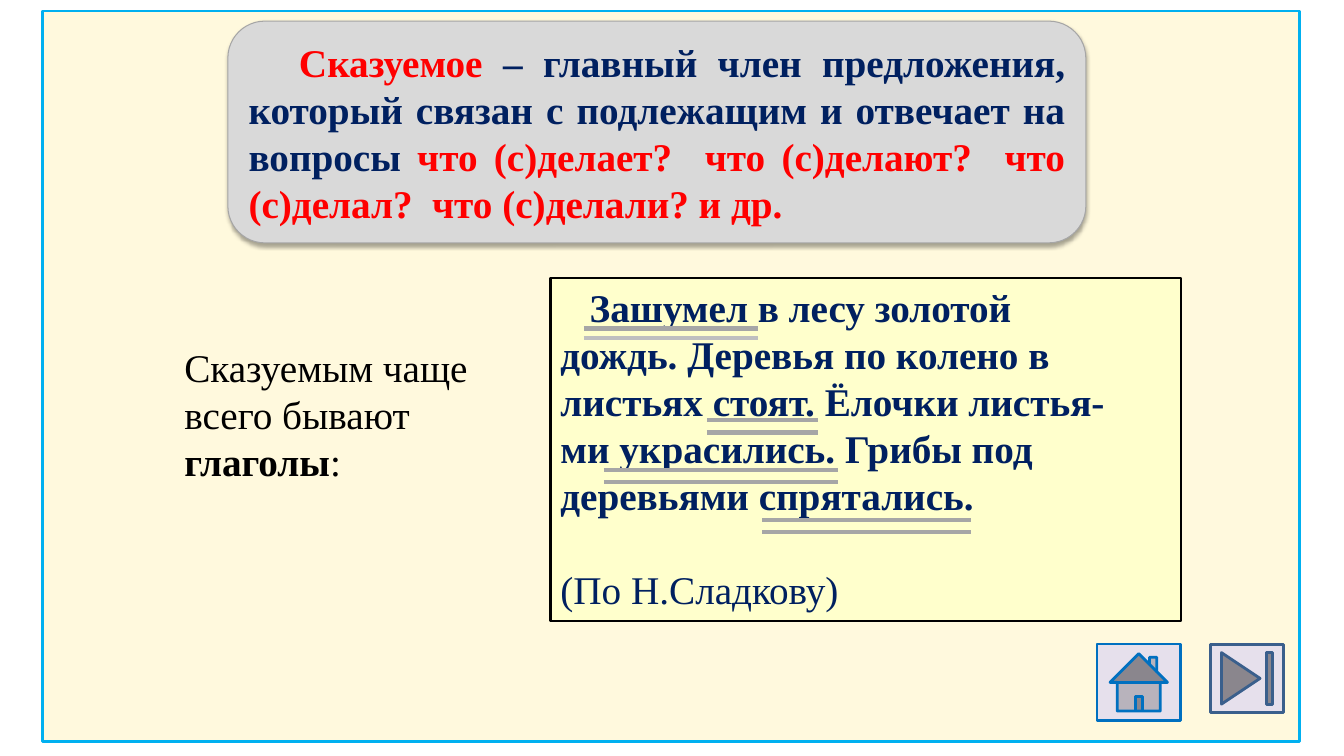
from lxml.etree import SubElement
from pptx import Presentation
from pptx.dml.color import RGBColor
from pptx.enum.shapes import MSO_CONNECTOR, MSO_SHAPE
from pptx.enum.text import MSO_ANCHOR, MSO_AUTO_SIZE, PP_ALIGN
from pptx.oxml.ns import qn
from pptx.util import Inches, Pt

NAVY, RED, BLACK, GRAY = "002060", "FF0000", "000000", "A6A6A6"
LILAC = "E6E0EC"


def color(value):
    return RGBColor.from_string(value)


def add_box(slide, kind, box, fill, line, width):
    sp = slide.shapes.add_shape(kind, *map(Inches, box))
    sp.shadow.inherit = False
    sp.fill.solid()
    sp.fill.fore_color.rgb = color(fill)
    sp.line.color.rgb = color(line)
    sp.line.width = Pt(width)
    return sp


def add_soft_shadow(sp):
    effects = sp._element.spPr.find(qn("a:effectLst"))
    shadow = SubElement(effects, qn("a:outerShdw"), blurRad=str(Pt(3.1)),
                        dist=str(Pt(1.8)), dir="5400000", rotWithShape="0")
    clr = SubElement(shadow, qn("a:srgbClr"), val=BLACK)
    SubElement(clr, qn("a:alpha"), val="35000")


def write(tf, paragraphs, align, indents):
    for i, (runs, indent) in enumerate(zip(paragraphs, indents)):
        p = tf.paragraphs[0] if i == 0 else tf.add_paragraph()
        p.alignment = align
        p._p.get_or_add_pPr().set("indent", str(Inches(indent)))
        for text, fill, bold in runs:
            r = p.add_run()
            r.text = text
            r.font.name = "Times New Roman"
            r.font.size = Pt(28)
            r.font.bold = bold
            r.font.color.rgb = color(fill)


def add_definition(slide, box):
    sp = add_box(slide, MSO_SHAPE.ROUNDED_RECTANGLE, box, "D9D9D9", GRAY, 0.75)
    add_soft_shadow(sp)
    tf = sp.text_frame
    tf.word_wrap = True
    tf.vertical_anchor = MSO_ANCHOR.MIDDLE
    runs = [
        ("Сказуемое ", RED, True),
        ("– главный член предложения, который связан с подлежащим "
         "и отвечает на вопросы ", NAVY, True),
        ("что (с)делает?  что (с)делают?  что (с)делал?  "
         "что (с)делали? и др.", RED, True),
    ]
    write(tf, [runs], PP_ALIGN.JUSTIFY, [0.5])


def add_remark(slide, box):
    tf = slide.shapes.add_textbox(*map(Inches, box)).text_frame
    tf.word_wrap = False
    tf.auto_size = MSO_AUTO_SIZE.SHAPE_TO_FIT_TEXT
    paragraphs = [
        [("Сказуемым чаще", BLACK, False)],
        [("всего бывают", BLACK, False)],
        [("глаголы", BLACK, True), (":", BLACK, False)],
    ]
    write(tf, paragraphs, PP_ALIGN.JUSTIFY, [0.5] * 3)


def add_double_underline(slide, left, top, width, gap, lower):
    group = slide.shapes.add_group_shape()
    for y, stroke in ((top, GRAY), (top + gap, lower)):
        line = group.shapes.add_connector(
            MSO_CONNECTOR.STRAIGHT, Inches(left), Inches(y),
            Inches(left + width), Inches(y))
        line.line.color.rgb = color(stroke)
        line.line.width = Pt(3)
        SubElement(line._element.spPr, qn("a:effectLst"))


def add_example(slide, box):
    left, top = box[:2]
    sp = add_box(slide, MSO_SHAPE.RECTANGLE, box, "FFFFCC", BLACK, 1.5)
    tf = sp.text_frame
    tf.word_wrap = True
    tf.auto_size = MSO_AUTO_SIZE.SHAPE_TO_FIT_TEXT
    tf.vertical_anchor = MSO_ANCHOR.TOP
    lines = [
        "Зашумел в лесу золотой",
        "дождь. Деревья по колено в",
        "листьях стоят. Ёлочки листья-",
        "ми украсились. Грибы под",
        "деревьями спрятались.",
    ]
    paragraphs = [[(text, NAVY, True)] for text in lines]
    paragraphs.append([("(По Н.Сладкову)", NAVY, False)])
    write(tf, paragraphs, PP_ALIGN.LEFT, [0.29] + [0] * 5)
    tf.paragraphs[-1].space_before = Pt(33.8)

    for x, y, width, gap, lower in (
        (0.33, 0.5, 1.73, 0.09, "BFBFBF"),
        (1.55, 1.41, 1.1, 0.12, GRAY),
        (0.53, 1.9, 2.32, 0.12, GRAY),
        (2.1, 2.4, 2.07, 0.12, GRAY),
    ):
        add_double_underline(slide, left + x, top + y, width, gap, lower)


def add_navigation(slide, left, top):
    add_box(slide, MSO_SHAPE.ACTION_BUTTON_END,
            (left + 1.13, top, 0.72, 0.68), LILAC, "3A5F8C", 2)
    add_box(slide, MSO_SHAPE.ACTION_BUTTON_HOME,
            (left, top, 0.83, 0.76), LILAC, "0070C0", 2)


def main():
    prs = Presentation()
    prs.slide_width, prs.slide_height = Inches(13.33), Inches(7.5)
    slide = prs.slides.add_slide(prs.slide_layouts[6])
    add_box(slide, MSO_SHAPE.RECTANGLE, (0.42, 0.11, 12.47, 7.25),
            "FFF9DD", "00B0F0", 2)
    add_definition(slide, (2.26, 0.21, 8.51, 2.2))
    add_remark(slide, (1.23, 3.36, 3.54, 1.51))
    add_example(slide, (5.46, 2.76, 6.25, 3.4))
    add_navigation(slide, 10.88, 6.39)
    prs.save("out.pptx")


if __name__ == "__main__":
    main()
